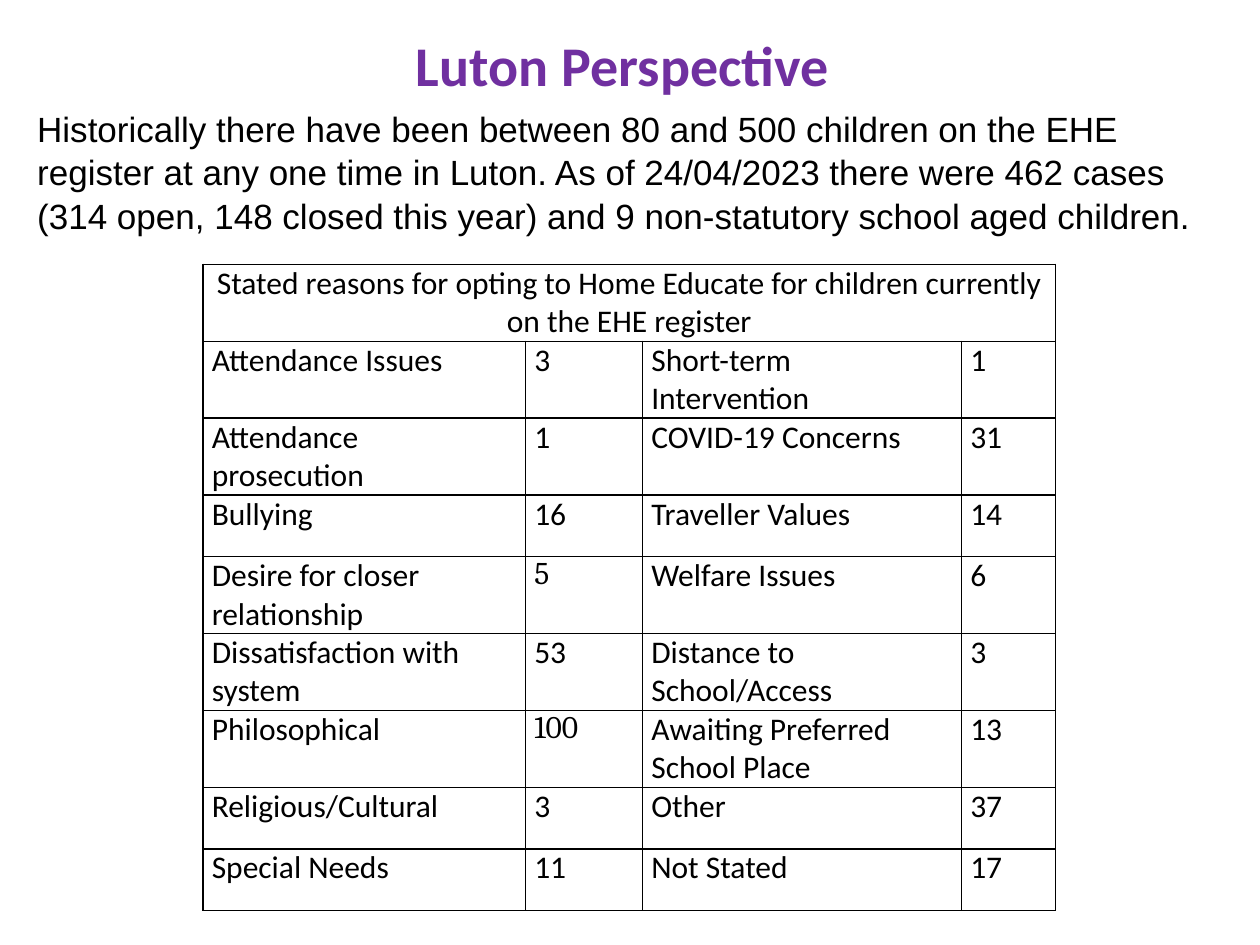
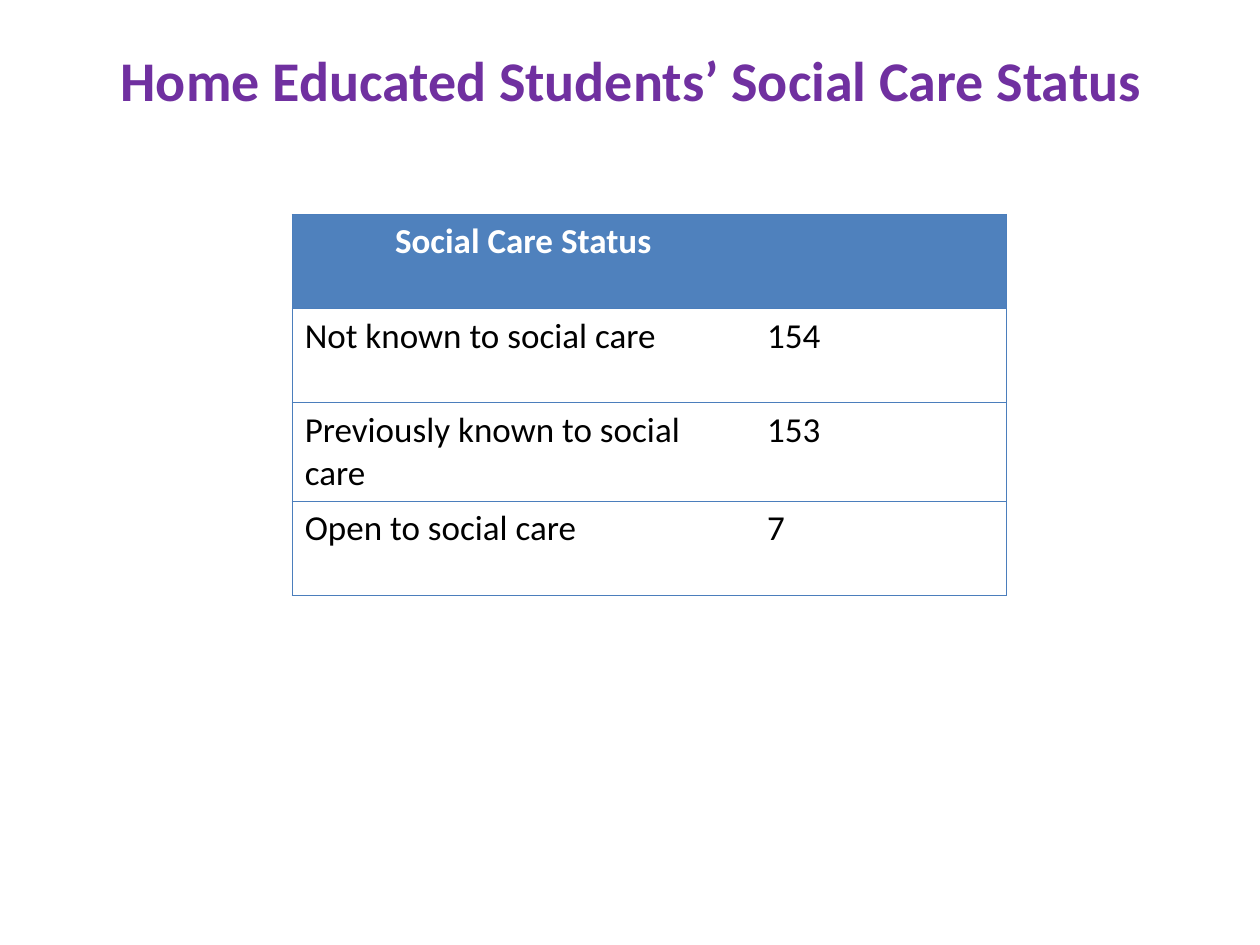
"""Build two slides on home education in Luton: stated reasons and social care status."""
from lxml.etree import SubElement
from pptx import Presentation
from pptx.dml.color import RGBColor
from pptx.enum.text import MSO_ANCHOR, MSO_AUTO_SIZE, PP_ALIGN
from pptx.oxml.ns import qn
from pptx.util import Cm, Pt

PURPLE = RGBColor(0x70, 0x30, 0xA0)
BLACK = RGBColor(0x00, 0x00, 0x00)
WHITE = RGBColor(0xFF, 0xFF, 0xFF)
HEADER_BLUE = RGBColor(0x4F, 0x81, 0xBD)
RULE_BLUE = RGBColor(0x4B, 0x7E, 0xBC)

TITLE_HEIGHT = 1.5
TWO_LINES, ONE_LINE = 1.55, 1.24

SUMMARY = (
    "Historically there have been between 80 and 500 children on the EHE register "
    "at any one time in Luton. As of 24/04/2023 there were 462 cases (314 open, "
    "148 closed this year) and 9 non-statutory school aged children."
)
REASONS_HEADING = (
    "Stated reasons for opting to Home Educate for children currently on the EHE register"
)
REASONS = [
    ("Attendance Issues", "3", "Short-term Intervention", "1"),
    ("Attendance prosecution", "1", "COVID-19 Concerns", "31"),
    ("Bullying", "16", "Traveller Values", "14"),
    ("Desire for closer relationship", "5", "Welfare Issues", "6"),
    ("Dissatisfaction with system", "53", "Distance to School/Access", "3"),
    ("Philosophical", "100", "Awaiting Preferred School Place", "13"),
    ("Religious/Cultural", "3", "Other", "37"),
    ("Special Needs", "11", "Not Stated", "17"),
]
REASON_HEIGHTS = [TWO_LINES] * 3 + [ONE_LINE] + [TWO_LINES] * 3 + [ONE_LINE] * 2
CAMBRIA_COUNTS = {"Desire for closer relationship", "Philosophical"}
CARE_STATUS = [
    ("Social Care Status", ""),
    ("Not known to social care", "154"),
    ("Previously known to social care", "153"),
    ("Open to social care", "7"),
]


def style_paragraph(paragraph, size, color, font="Calibri", bold=False, align=PP_ALIGN.LEFT):
    """Set the font and alignment of one paragraph."""
    paragraph.alignment = align
    paragraph.font.name = font
    paragraph.font.size = Pt(size)
    paragraph.font.bold = bold
    paragraph.font.color.rgb = color


def add_titled_slide(deck, heading, left, top, width):
    """Add a title-only slide with the shared purple heading."""
    slide = deck.slides.add_slide(deck.slide_layouts[5])
    title = slide.shapes.title
    title.left, title.top = Cm(left), Cm(top)
    title.width, title.height = Cm(width), Cm(TITLE_HEIGHT)
    frame = title.text_frame
    frame.text = heading
    frame.auto_size = MSO_AUTO_SIZE.NONE
    frame.vertical_anchor = MSO_ANCHOR.MIDDLE
    frame.margin_top = frame.margin_bottom = 0
    style_paragraph(frame.paragraphs[0], 32, PURPLE, bold=True, align=PP_ALIGN.CENTER)
    return slide


def add_summary(slide, text):
    """Add the introductory text below the title."""
    frame = slide.shapes.add_textbox(Cm(0.5), Cm(2.13), Cm(24.4), Cm(3.1)).text_frame
    frame.word_wrap = True
    frame.margin_top = 0
    frame.text = text
    frame.paragraphs[0].line_spacing = 1.04
    style_paragraph(frame.paragraphs[0], 20, BLACK, font="Arial")


def add_grid(slide, left, top, widths, heights):
    """Add a table with the given column widths and row heights."""
    table = slide.shapes.add_table(
        len(heights), len(widths), Cm(left), Cm(top), Cm(sum(widths)), Cm(sum(heights))
    ).table
    for column, width in zip(table.columns, widths):
        column.width = Cm(width)
    for row, height in zip(table.rows, heights):
        row.height = Cm(height)
    return table


def rule_cell(cell, color, width, sides="LRTB"):
    """Draw the named borders of a cell and hide the others."""
    properties = cell._tc.get_or_add_tcPr()
    for side in "LRTB":
        line = SubElement(properties, qn(f"a:ln{side}"), w=str(Pt(width)))
        if side in sides:
            fill = SubElement(line, qn("a:solidFill"))
            SubElement(fill, qn("a:srgbClr"), val=str(color))
        else:
            SubElement(line, qn("a:noFill"))


def fill_cell(cell, text, size, color, **style):
    """Write one cell's text and set its style."""
    cell.text = text
    style_paragraph(cell.text_frame.paragraphs[0], size, color, **style)


def add_reasons_table(slide):
    """Add the table of reasons for home educating."""
    table = add_grid(slide, 4.09, 5.33, [6.5, 2.36, 6.43, 1.9], REASON_HEIGHTS)
    for cell in table.iter_cells():
        rule_cell(cell, BLACK, 1)
        cell.fill.background()
        cell.margin_left = cell.margin_right = Cm(0.18)
        cell.margin_top = cell.margin_bottom = 0
    heading = table.cell(0, 0)
    heading.merge(table.cell(0, 3))
    fill_cell(heading, REASONS_HEADING, 18, BLACK, align=PP_ALIGN.CENTER)
    for row, reasons in enumerate(REASONS, start=1):
        for column, text in enumerate(reasons):
            is_cambria = column == 1 and reasons[0] in CAMBRIA_COUNTS
            font = "Cambria" if is_cambria else "Calibri"
            fill_cell(table.cell(row, column), text, 18, BLACK, font=font)


def add_care_table(slide):
    """Add the table of social care status."""
    table = add_grid(slide, 5.89, 4.32, [9.32, 5.08], [1.9] * len(CARE_STATUS))
    for row, entries in enumerate(CARE_STATUS):
        is_header = row == 0
        for column, text in enumerate(entries):
            cell = table.cell(row, column)
            rule_cell(cell, RULE_BLUE, 0.75, "LTB" if column == 0 else "RTB")
            if is_header:
                cell.fill.solid()
                cell.fill.fore_color.rgb = HEADER_BLUE
            else:
                cell.fill.background()
            fill_cell(
                cell, text, 20, WHITE if is_header else BLACK, bold=is_header,
                align=PP_ALIGN.CENTER if is_header else PP_ALIGN.LEFT,
            )


def main():
    """Build and save the deck."""
    deck = Presentation()
    deck.slide_width, deck.slide_height = Cm(25.4), Cm(19.05)

    perspective = add_titled_slide(deck, "Luton Perspective", 0.5, 0.54, 24.1)
    add_summary(perspective, SUMMARY)
    add_reasons_table(perspective)

    care = add_titled_slide(deck, "Home Educated Students’ Social Care Status", 1.3, 0.84, 22.86)
    add_care_table(care)

    deck.save("out.pptx")


if __name__ == "__main__":
    main()
